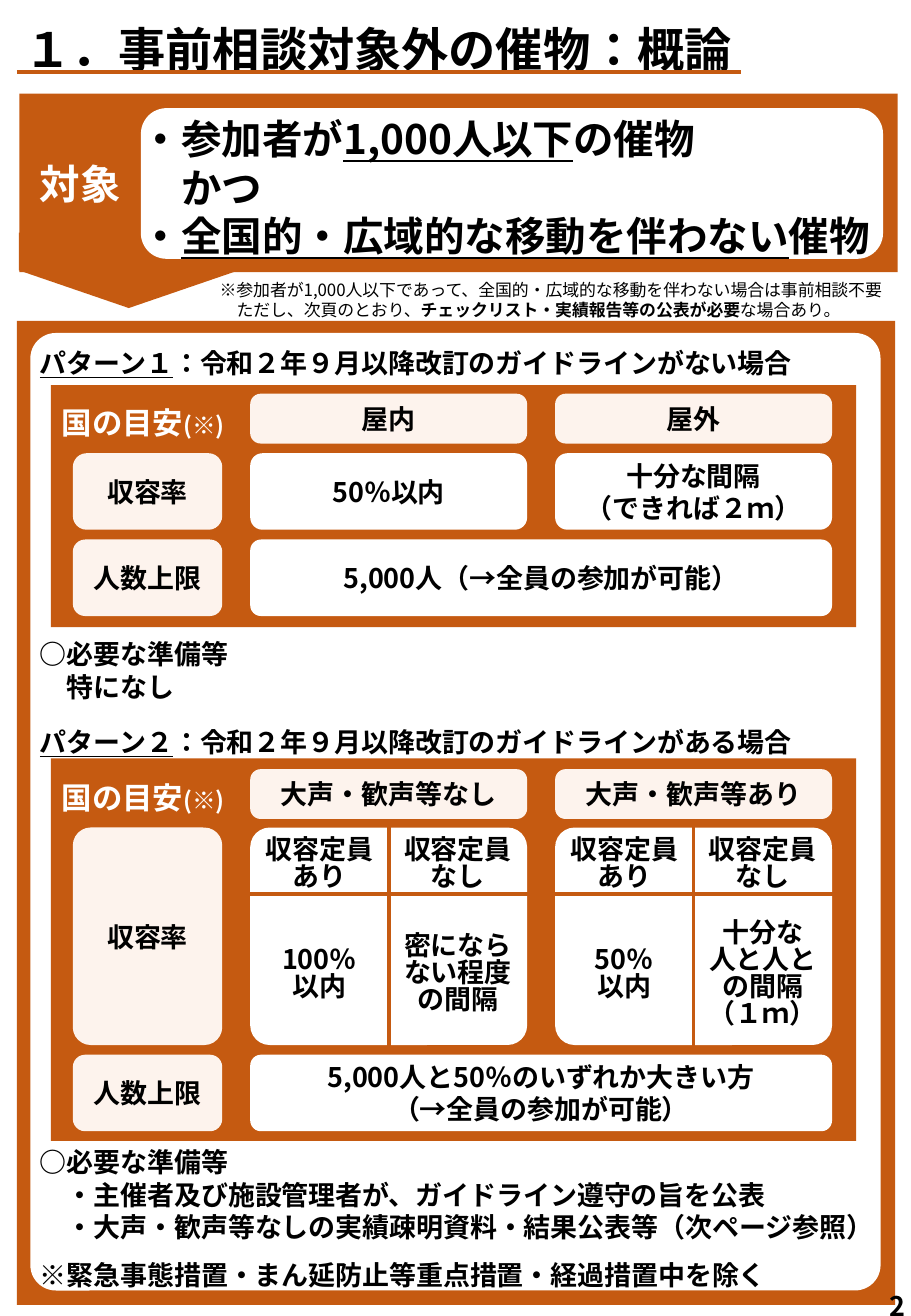
from lxml.etree import SubElement
from pptx import Presentation
from pptx.dml.color import RGBColor
from pptx.enum.lang import MSO_LANGUAGE_ID
from pptx.enum.shapes import MSO_CONNECTOR, MSO_SHAPE
from pptx.enum.text import MSO_ANCHOR, MSO_AUTO_SIZE, PP_ALIGN
from pptx.oxml.ns import qn
from pptx.util import Pt

# Content: a paragraph is (indent in characters, runs); a run is (text, style)
TITLE = [(0, [("１．事前相談対象外の催物：概論", "")])]
TARGET = [(0, [("対象", "")])]
CRITERIA = [
    (0, [("・参加者が", ""), ("1,000人以下", "u"), ("の催物", "")]),
    (1, [("かつ", "")]),
    (0, [("・", ""), ("全国的・広域的な移動を伴わない", "u"), ("催物", "")]),
]
CRITERIA_NOTE = [
    (0, [("※参加者が1,000人以下であって、全国的・広域的な移動を伴わない場合は事前相談不要", "")]),
    (1, [("ただし、次頁のとおり、", ""), ("チェックリスト・実績報告等の公表が必要", "b"),
         ("な場合あり。", "")]),
]
# (top, paragraphs) of the text between the panels
SECTIONS = [
    (280, [(0, [("パターン１", "u"), ("：令和２年９月以降改訂のガイドラインがない場合", "")])]),
    (520, [(0, [("○必要な準備等", "")]), (1, [("特になし", "")])]),
    (592, [(0, [("パターン２", "u"), ("：令和２年９月以降改訂のガイドラインがある場合", "")])]),
    (938, [(0, [("○必要な準備等", "")]),
           (1, [("・主催者及び施設管理者が、ガイドライン遵守の旨を公表", "")]),
           (1, [("・大声・歓声等なしの実績疎明資料・結果公表等（次ページ参照）", "")])]),
    (1031, [(0, [("※緊急事態措置・まん延防止等重点措置・経過措置中を除く", "")])]),
]
GUIDE = [(0, [("国の目安", ""), ("(※)", "s")])]
PANELS = [
    {"top": 317, "height": 199, "guide_top": 328, "head_top": 324, "rate": (373, 63),
     "limit_top": 444, "heads": ["屋内", "屋外"],
     "rates": [["50％以内"], ["十分な間隔", "（できれば２ｍ）"]],
     "limit": ["5,000人（→全員の参加が可能）"], "radii": (0.18, 0.16)},
    {"top": 624, "height": 315, "guide_top": 636, "head_top": 633, "rate": (681, 179),
     "limit_top": 868, "heads": ["大声・歓声等なし", "大声・歓声等あり"],
     "rates": [[], []],
     "limit": ["5,000人と50％のいずれか大きい方", "（→全員の参加が可能）"], "radii": (0.12, 0.09)},
]
SEATING = [["収容定員", "あり"], ["収容定員", "なし"]]
SEATING_RATES = [
    [["100％", "以内"], ["密にならない程度の間隔"]],
    [["50％", "以内"], ["十分な", "人と人との間隔", "（１ｍ）"]],
]
PAGE_NUMBER = [(0, [("2", "")])]

COLORS = {"orange": "C55A11", "cream": "FDF3ED", "white": "FFFFFF", "black": "000000"}
FONT = "Noto Sans CJK JP"
PX = 9144  # 100 px to the inch
LABEL_X, LABEL_W = 60, 123
COLUMNS, COLUMN_W = (206, 457), 228
HEAD_H, LIMIT_H = 41, 63
SPLIT_Y = 736

prs = Presentation()
prs.slide_width, prs.slide_height = 750 * PX, 1083 * PX
slide = prs.slides.add_slide(prs.slide_layouts[1])
shapes = slide.shapes


def rgb(color):
    return RGBColor.from_string(COLORS[color])


def px(*lengths):
    return [length * PX for length in lengths]


def lines(texts):
    return [(0, [(text, "")]) for text in texts]


def write(target, paragraphs, size, color="black", bold=True, align=PP_ALIGN.LEFT,
          anchor=MSO_ANCHOR.TOP, spacing=None, inset=(10, 5)):
    frame = target.text_frame
    frame.word_wrap = True
    frame.auto_size = MSO_AUTO_SIZE.NONE
    frame.vertical_anchor = anchor
    frame.margin_left, frame.margin_top = px(*inset)
    frame.margin_right, frame.margin_bottom = px(*inset)
    for number, (indent, runs) in enumerate(paragraphs):
        paragraph = frame.add_paragraph() if number else frame.paragraphs[0]
        paragraph.alignment = align
        paragraph.space_before = Pt(0)
        if spacing:
            paragraph.line_spacing = Pt(spacing)
        properties = paragraph._p.get_or_add_pPr()
        properties.set("marL", str(Pt(indent * size)))
        properties.set("indent", "0")
        SubElement(properties, qn("a:buNone"))
        for text, style in runs:
            run = paragraph.add_run()
            run.text = text
            font = run.font
            font.size = Pt(size - 4 if style == "s" else size)
            font.bold = bold or style == "b"
            font.underline = style == "u"
            font.color.rgb = rgb(color)
            font.name = FONT
            font.language_id = MSO_LANGUAGE_ID.JAPANESE
            SubElement(run._r.get_or_add_rPr(), qn("a:ea"), typeface=FONT)


def add_text(box, paragraphs, size, **options):
    write(shapes.add_textbox(*px(*box)), paragraphs, size, **options)


def add_block(box, fill, kind=MSO_SHAPE.RECTANGLE, radius=None):
    block = shapes.add_shape(kind, *px(*box))
    block.shadow.inherit = False
    block.fill.solid()
    block.fill.fore_color.rgb = rgb(fill)
    block.line.fill.background()
    if radius is not None:
        block.adjustments[0] = radius
    return block


def add_cell(box, fill, radius, texts=()):
    cell = add_block(box, fill, MSO_SHAPE.ROUNDED_RECTANGLE, radius)
    if texts:
        write(cell, lines(texts), 16, align=PP_ALIGN.CENTER,
              anchor=MSO_ANCHOR.MIDDLE, inset=(7, 4))


def add_rule(x1, y1, x2, y2):
    rule = shapes.add_connector(MSO_CONNECTOR.STRAIGHT, *px(x1, y1, x2, y2))
    rule.line.color.rgb = rgb("orange")
    rule.line.width = Pt(2.25)
    SubElement(rule.element.spPr, qn("a:effectLst"))


def place(placeholder, box, paragraphs, size):
    placeholder.left, placeholder.top, placeholder.width, placeholder.height = px(*box)
    write(placeholder, paragraphs, size)


# Title
place(shapes.title, (10, 12, 654, 57), TITLE, 28)
add_rule(14, 59, 610, 59)

# Target banner with its criteria
add_block((75, 132, 62, 181), "orange", MSO_SHAPE.PENTAGON).rotation = 90
add_block((16, 77, 723, 147), "orange")
add_cell((116, 89, 611, 124), "white", 0.17)
criteria = slide.placeholders[1]
shapes.element.append(criteria.element)  # bring in front of the banner
place(criteria, (106, 89, 622, 131), CRITERIA, 24)
add_text((23, 126, 119, 50), TARGET, 24, color="white")
add_text((171, 225, 579, 44), CRITERIA_NOTE, 10, bold=False)

# Frame and section text
add_block((14, 264, 723, 810), "orange")
add_cell((25, 274, 700, 788), "white", 0.03)
for top, paragraphs in SECTIONS:
    add_text((23, top, 727, 10 + 27 * len(paragraphs)), paragraphs, 16)

# Guideline panels
for panel in PANELS:
    rate_top, rate_h = panel["rate"]
    limit_top = panel["limit_top"]
    label_radius, rate_radius = panel["radii"]
    add_block((42, panel["top"], 663, panel["height"]), "orange")
    add_text((41, panel["guide_top"], 179, 40), GUIDE, 18, color="white")
    add_cell((LABEL_X, rate_top, LABEL_W, rate_h), "cream", label_radius, ["収容率"])
    add_cell((LABEL_X, limit_top, LABEL_W, LIMIT_H), "cream", 0.16, ["人数上限"])
    for x, head, rate in zip(COLUMNS, panel["heads"], panel["rates"]):
        add_cell((x, panel["head_top"], COLUMN_W, HEAD_H), "cream", 0.21, [head])
        add_cell((x, rate_top, COLUMN_W, rate_h), "white", rate_radius, rate)
    limit_w = COLUMNS[1] + COLUMN_W - COLUMNS[0]
    add_cell((COLUMNS[0], limit_top, limit_w, LIMIT_H), "white", 0.14, panel["limit"])

# Seating split inside the second panel
half = COLUMN_W // 2
add_rule(193, SPLIT_Y, 705, SPLIT_Y)
for column_x, rates in zip(COLUMNS, SEATING_RATES):
    add_rule(column_x + half, 675, column_x + half, 864)
    for side, (seating, rate) in enumerate(zip(SEATING, rates)):
        x = column_x + side * half
        add_text((x, 685, half, 56), lines(seating), 16, align=PP_ALIGN.CENTER, spacing=16)
        add_text((x, SPLIT_Y, half, 132), lines(rate), 16, align=PP_ALIGN.CENTER,
                 anchor=MSO_ANCHOR.MIDDLE, spacing=16)

# Page number
add_text((727, 1056, 23, 27), PAGE_NUMBER, 16, inset=(5, 5))

prs.save("out.pptx")
